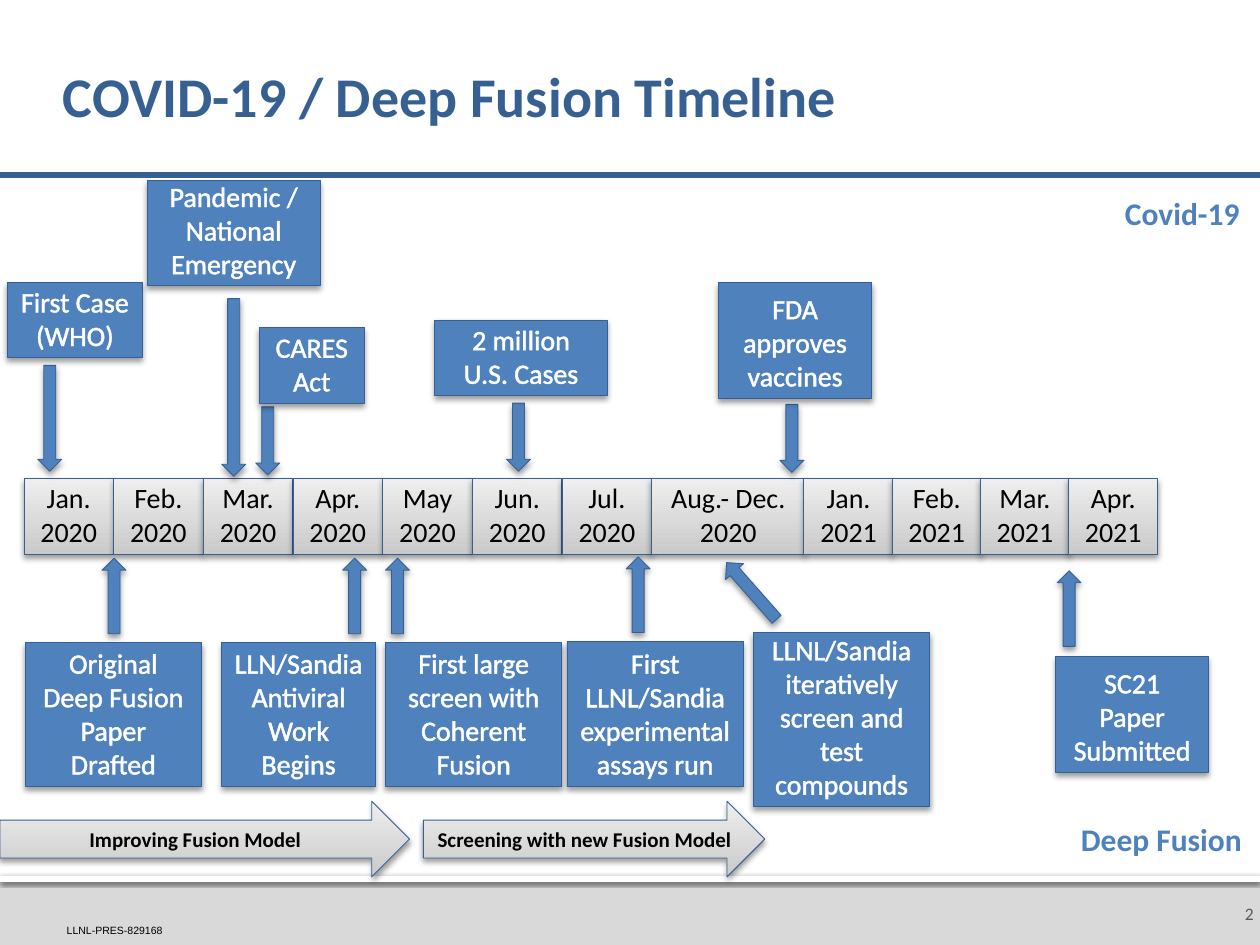
from lxml.etree import SubElement
from pptx import Presentation
from pptx.dml.color import RGBColor
from pptx.enum.shapes import MSO_CONNECTOR as Link, MSO_SHAPE as Form
from pptx.enum.text import MSO_ANCHOR as Anchor, PP_ALIGN as Align
from pptx.oxml import parse_xml
from pptx.oxml.ns import nsdecls, qn
from pptx.util import Inches, Pt

WHITE = RGBColor(0xFF, 0xFF, 0xFF)
BLACK = RGBColor(0, 0, 0)
BLUE = RGBColor(0x4F, 0x81, 0xBD)
NAVY = RGBColor(0x37, 0x60, 0x92)
BAND = RGBColor(0xD9, 0xD9, 0xD9)
GRAY = RGBColor(0x59, 0x59, 0x59)
DARK = RGBColor(0xCA, 0xCA, 0xCA)
PALE = RGBColor(0xEE, 0xEE, 0xEE)

deck = Presentation()
deck.slide_width = Inches(10)
deck.slide_height = Inches(7.5)
slide = deck.slides.add_slide(deck.slide_layouts[6])
shapes = slide.shapes
col = deck.slide_width / 100
row = deck.slide_height / 75


def draw(form, left, top, wide, tall, fill=BLUE, edge=NAVY, shade=(3.5, 2, 38), turn=0):
    shape = shapes.add_shape(form, int(left * col), int(top * row), int(wide * col), int(tall * row))
    shape.rotation = turn
    shape.shadow.inherit = False
    if fill:
        shape.fill.solid()
        shape.fill.fore_color.rgb = fill
    else:
        shape.fill.gradient()
        shape.fill.gradient_angle = 90
        for stop, tone in zip(shape.fill.gradient_stops, (DARK, PALE)):
            stop.color.rgb = tone
    if edge:
        shape.line.color.rgb = edge
        shape.line.width = Pt(0.5)
    else:
        shape.line.fill.background()
    if shade:
        blur, drop, dense = shade
        effect = shape._element.spPr.find(qn("a:effectLst"))
        effect.append(parse_xml(
            f'<a:outerShdw {nsdecls("a")} blurRad="{Pt(blur)}" dist="{Pt(drop)}" dir="5400000" rotWithShape="0">'
            f'<a:srgbClr val="000000"><a:alpha val="{dense * 1000}"/></a:srgbClr></a:outerShdw>'))
    return shape


def write(shape, text, size=16, color=WHITE, bold=False, font="Calibri", align=Align.CENTER,
          anchor=Anchor.BOTTOM, inset=(0.1, 0.05, 0.1, 0.05), wrap=True, glow=False, space=None):
    frame = shape.text_frame
    frame.word_wrap = wrap
    frame.vertical_anchor = anchor
    frame.margin_left, frame.margin_top, frame.margin_right, frame.margin_bottom = map(Inches, inset)
    frame.text = text
    for para in frame.paragraphs:
        para.alignment = align
        para.line_spacing = space
        for run in para.runs:
            run.font.size = Pt(size)
            run.font.name = font
            run.font.bold = bold
            run.font.color.rgb = color
            if glow:
                line = parse_xml(f'<a:ln {nsdecls("a")} w="{Pt(0.75)}"><a:solidFill>'
                                 f'<a:srgbClr val="{color}"/></a:solidFill></a:ln>')
                run.font._element.insert(0, line)


draw(Form.RECTANGLE, 0, 69.5, 100, 5.5, fill=BAND, edge=None, shade=None)
draw(Form.RECTANGLE, 0, 69.5, 100, 0.5, fill=WHITE, edge=None, shade=(2.5, 0.8, 60))

rule = shapes.add_connector(Link.STRAIGHT, 0, int(13.9 * row), int(100 * col), int(13.9 * row))
rule.line.color.rgb = NAVY
rule.line.width = Pt(3)
SubElement(rule._element.spPr, qn("a:effectLst"))

left = dict(align=Align.LEFT)
tag = dict(size=18, color=BLUE, bold=True, anchor=Anchor.TOP, wrap=False, **left)
labels = [
    ("2", (96.5, 70, 3.5, 5), dict(size=10, color=GRAY, align=Align.RIGHT, anchor=Anchor.MIDDLE,
                                   inset=(0.1, 0.05, 0.05, 0.05))),
    ("LLNL-PRES-829168", (5.3, 73.3, 9.6, 1), dict(size=6, color=BLACK, font="Arial", inset=(0, 0, 0, 0), **left)),
    ("COVID-19 / Deep Fusion Timeline", (5, 2.4, 90, 11),
     dict(size=32, color=NAVY, bold=True, anchor=Anchor.MIDDLE, inset=(0, 0.05, 0.05, 0.05), space=0.9, **left)),
    ("Covid-19", (88.3, 14.9, 11.1, 4), tag),
    ("Deep Fusion", (84.8, 64.6, 15.2, 4), tag),
]
for text, (x, y, wide, tall), look in labels:
    box = shapes.add_textbox(int(x * col), int(y * row), int(wide * col), int(tall * row))
    write(box, text, **look)

months = [(name, 2020, 1.9 + 7.12 * i, 7.1)
          for i, name in enumerate(["Jan.", "Feb.", "Mar.", "Apr.", "May", "Jun.", "Jul."])]
months.append(("Aug.- Dec.", 2020, 51.7, 12.2))
months += [(name, 2021, 63.8 + 7 * i, 7.1) for i, name in enumerate(["Jan.", "Feb.", "Mar.", "Apr."])]
for name, year, x, wide in months:
    write(draw(Form.RECTANGLE, x, 38, wide, 6, fill=None), f"{name}\n{year}", color=BLACK)

arrows = [
    (3, 29, 8.4, 0), (17.6, 23.7, 14.1, 0), (20.3, 32.3, 5.4, 0), (40.2, 32, 5.4, 0), (61.9, 32.1, 5.4, 0),
    (8.1, 44.3, 6, 180), (27.2, 44.3, 6, 180), (30.6, 44.3, 6, 180), (49.7, 44.2, 6, 180),
    (58.7, 43.9, 6, 138.6), (83.9, 45.3, 6, 180),
]
for x, y, tall, turn in arrows:
    draw(Form.DOWN_ARROW, x, y, 1.9, tall, turn=turn)

events = [
    ("First Case\n(WHO)", 0.6, 22.4, 10.7, 6),
    ("Pandemic / National Emergency", 11.7, 14.3, 13.7, 8.4),
    ("CARES\nAct", 20.6, 26, 8.3, 6),
    ("2 million U.S. Cases", 34.5, 25.4, 13.7, 6),
    ("FDA approves vaccines", 57, 22.4, 12.2, 9.2),
    ("Original Deep Fusion Paper Drafted", 2, 51, 14, 11.4),
    ("LLN/Sandia Antiviral Work Begins", 17.6, 51, 12.2, 11.4),
    ("First large screen with Coherent Fusion", 30.6, 51, 14, 11.4),
    ("First LLNL/Sandia experimental assays run", 45, 50.9, 14, 11.5),
    ("LLNL/Sandia iteratively screen and test compounds", 59.8, 50.2, 14, 13.8),
    ("SC21 Paper Submitted", 83.8, 52.1, 12.1, 9.2),
]
for text, *place in events:
    write(draw(Form.RECTANGLE, *place), text, glow=True)

for text, x, wide in [("Improving Fusion Model", 0, 32.5), ("Screening with new Fusion Model", 33.6, 27.1)]:
    write(draw(Form.RIGHT_ARROW, x, 63.6, wide, 6, fill=None), text, size=12, color=BLACK, bold=True)

deck.save("out.pptx")
